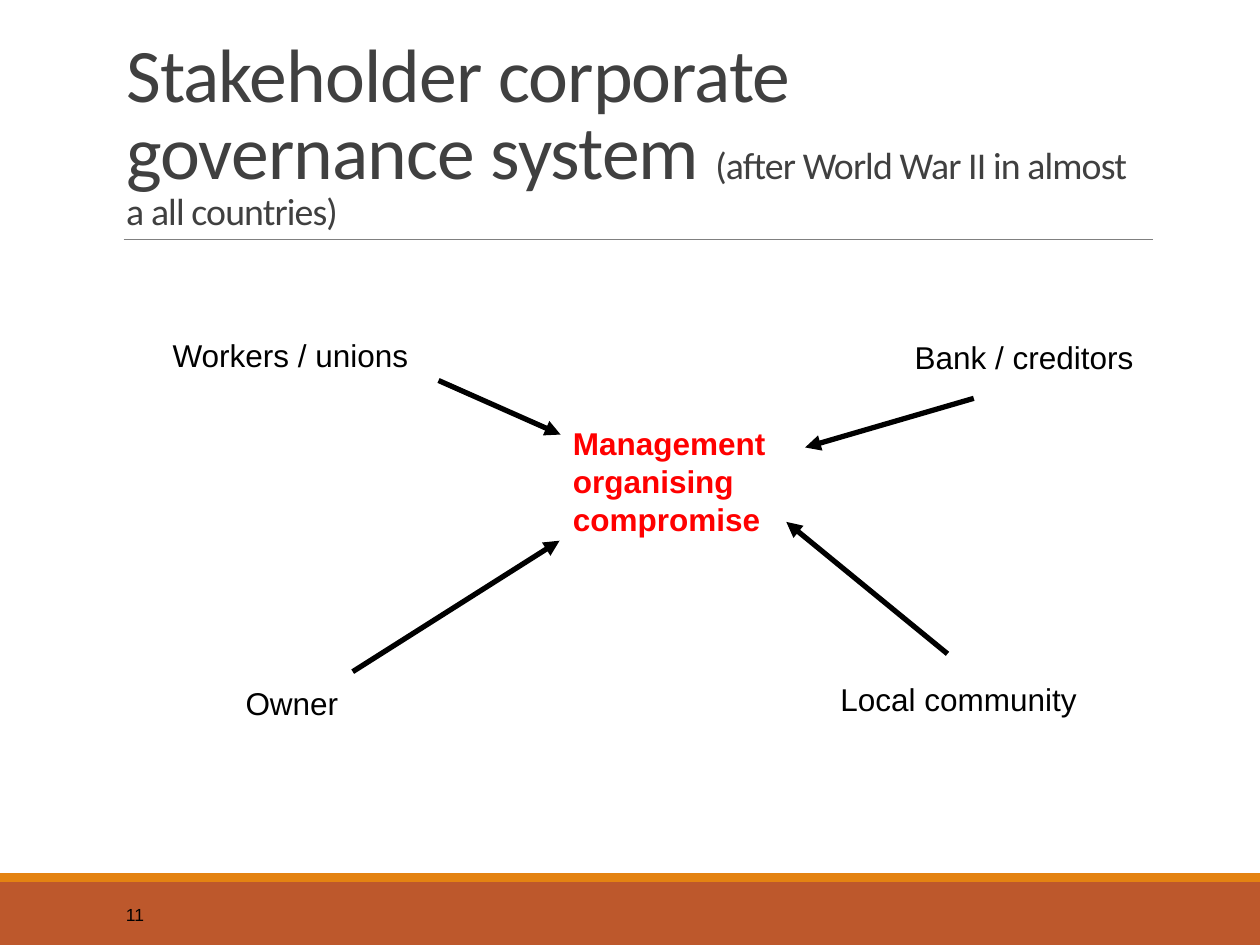
import pptx
import pptx.dml.color
import pptx.enum.shapes
import pptx.enum.text
import pptx.oxml
import pptx.oxml.ns
import pptx.util
from pptx.util import Cm

COLORS = {
    "title": "404040",
    "text": "000000",
    "accent": "FF0000",
    "footer": "BD582C",
    "stripe": "E48312",
    "rule": "808080",
}
LABEL_WIDTH, LABEL_HEIGHT = 5.87, 1.02

# Stakeholder, label position, arrow start, arrow end (cm)
STAKEHOLDERS = [
    ("Workers / unions", (3.23, 6.65), (8.84, 7.67), (11.3, 8.76)),
    ("Owner", (4.7, 13.67), (7.11, 13.54), (11.28, 10.9)),
    ("Bank / creditors", (18.19, 6.68), (19.63, 8.03), (16.23, 9.02)),
    ("Local community", (16.69, 13.59), (19.1, 13.18), (15.85, 10.52)),
]


def rgb(name):
    return pptx.dml.color.RGBColor.from_string(COLORS[name])


def add_run(paragraph, text, size=18, font="Arial", color="text", bold=False, spacing=None):
    run = paragraph.add_run()
    run.text = text
    run.font.size = pptx.util.Pt(size)
    run.font.name = font
    run.font.bold = bold
    run.font.color.rgb = rgb(color)
    if spacing is not None:
        run._r.get_or_add_rPr().set("spc", str(int(spacing * 100)))


def add_text(slide, text, left, top, width=LABEL_WIDTH, height=LABEL_HEIGHT,
             anchor=pptx.enum.text.MSO_ANCHOR.TOP, **text_format):
    shape = slide.shapes.add_textbox(Cm(left), Cm(top), Cm(width), Cm(height))
    shape.text_frame.word_wrap = True
    shape.text_frame.vertical_anchor = anchor
    add_run(shape.text_frame.paragraphs[0], text, **text_format)


def add_bar(slide, top, height, color):
    shape = slide.shapes.add_shape(pptx.enum.shapes.MSO_SHAPE.RECTANGLE,
                                   0, Cm(top), Cm(25.4), Cm(height))
    shape.shadow.inherit = False
    shape.fill.solid()
    shape.fill.fore_color.rgb = rgb(color)
    shape.line.fill.background()


def add_line(slide, start, end, color="text", width=3, arrow=False):
    connector = slide.shapes.add_connector(
        pptx.enum.shapes.MSO_CONNECTOR.STRAIGHT,
        *(Cm(value) for value in start + end))
    connector.line.color.rgb = rgb(color)
    connector.line.width = pptx.util.Pt(width)
    if arrow:
        line = connector.line._get_or_add_ln()
        head = pptx.oxml.parse_xml(
            f'<a:tailEnd {pptx.oxml.ns.nsdecls("a")} type="triangle"/>')
        line.append(head)
    connector._element.spPr.append(
        pptx.oxml.parse_xml(f'<a:effectLst {pptx.oxml.ns.nsdecls("a")}/>'))


def set_title(slide):
    title = slide.shapes.title
    title.left, title.top, title.width, title.height = Cm(2.29), Cm(0.79), Cm(20.96), Cm(4.04)
    frame = title.text_frame
    frame.word_wrap = True
    frame.auto_size = pptx.enum.text.MSO_AUTO_SIZE.NONE
    frame.vertical_anchor = pptx.enum.text.MSO_ANCHOR.BOTTOM
    paragraph = frame.paragraphs[0]
    paragraph.alignment = pptx.enum.text.PP_ALIGN.LEFT
    paragraph.line_spacing = 0.85
    for text, size in [("Stakeholder corporate governance system ", 43.2),
                       ("(after World War II in almost a all countries)", 21.6)]:
        add_run(paragraph, text, size=size, font="Calibri", color="title", spacing=-0.5)


def main():
    presentation = pptx.Presentation()
    presentation.slide_width, presentation.slide_height = Cm(25.4), Cm(19.05)
    slide = presentation.slides.add_slide(presentation.slide_layouts[5])

    # Footer bars, title and its rule
    add_bar(slide, 17.78, 1.27, "footer")
    add_bar(slide, 17.6, 0.18, "stripe")
    add_line(slide, (2.49, 4.83), (23.24, 4.83), color="rule", width=0.5)
    set_title(slide)

    # Slide number
    add_text(slide, "11", 2.29, 17.93, width=5.16, size=10,
             anchor=pptx.enum.text.MSO_ANCHOR.MIDDLE)

    # Management in the middle, stakeholders pointing at it
    add_text(slide, "Management organising compromise", 11.3, 8.43, height=2.57,
             color="accent", bold=True)
    for name, position, start, end in STAKEHOLDERS:
        add_text(slide, name, *position)
        add_line(slide, start, end, arrow=True)

    presentation.save("out.pptx")


if __name__ == "__main__":
    main()
